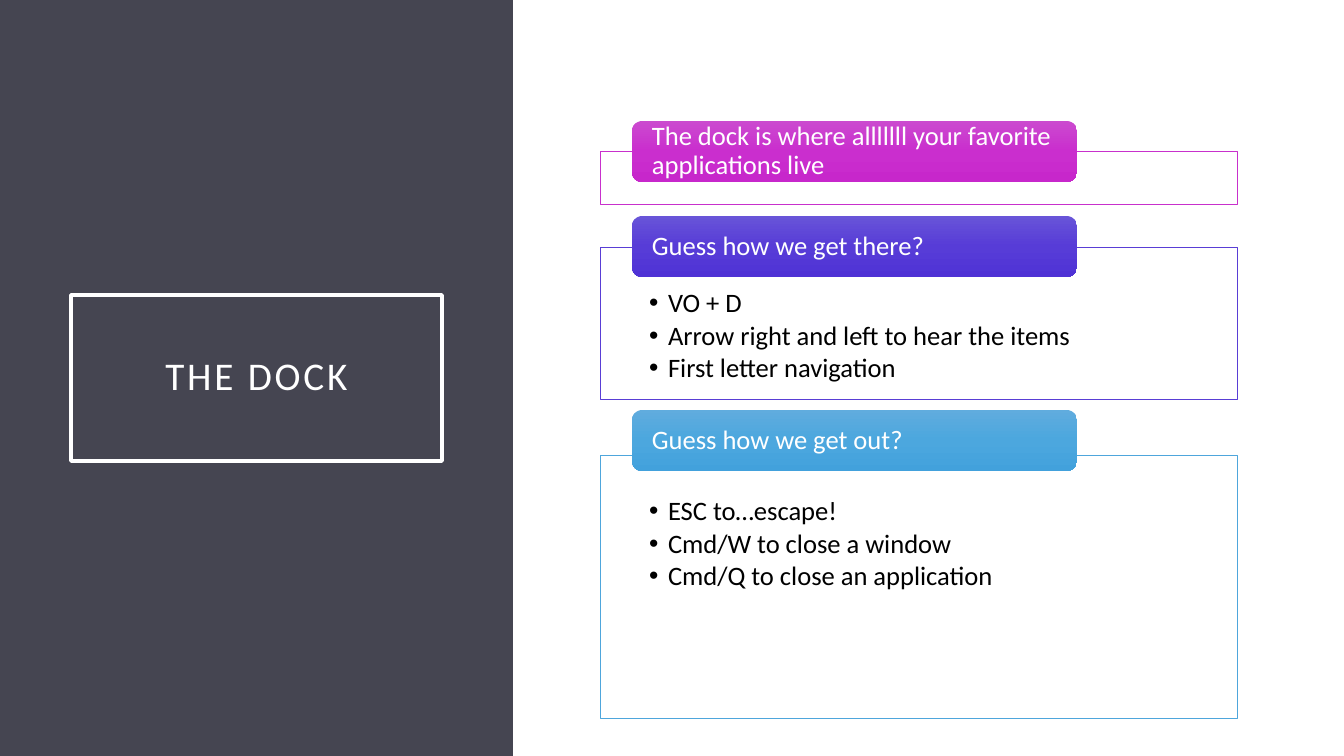
import copy

import pptx
import pptx.dml.color
import pptx.enum.shapes
import pptx.enum.text
import pptx.util

COLORS = {
    "panel": "454551", "white": "FFFFFF", "black": "000000",
    "pink": "C830CC", "violet": "593ED5", "blue": "4EA6DC",
}
FADES = {
    "pink": ("CB4ACF", "CA2ECE", "C727CB"),
    "violet": ("6854D8", "573CD7", "4F32D5"),
    "blue": ("60ACDE", "4CA7DE", "42A1DC"),
}
SHAPE = pptx.enum.shapes.MSO_SHAPE
ALIGN = pptx.enum.text.PP_ALIGN
ANCHOR = pptx.enum.text.MSO_ANCHOR
NO_FIT = pptx.enum.text.MSO_AUTO_SIZE.NONE
SCALE = 914400 / 100.8

# Tab top, frame top and frame height, colour, heading, list items
CARDS = [
    (121, 151, 53, "pink",
     "The dock is where alllllll your favorite applications live", []),
    (216, 247, 152, "violet", "Guess how we get there?",
     ["VO + D", "Arrow right and left to hear the items",
      "First letter navigation"]),
    (410, 455, 263, "blue", "Guess how we get out?",
     ["ESC to…escape!", "Cmd/W to close a window",
      "Cmd/Q to close an application"]),
]


def px(count):
    return pptx.util.Emu(round(count * SCALE))


def rgb(code):
    return pptx.dml.color.RGBColor.from_string(code)


def style(item, values):
    for name, value in values.items():
        setattr(item, name, value)


def place(shape, box):
    style(shape, dict(zip(("left", "top", "width", "height"), map(px, box))))


def draw(slide, kind, box):
    shape = slide.shapes.add_shape(kind, *map(px, box))
    shape.shadow.inherit = False
    shape.line.fill.background()
    return shape


def paint(shape, color):
    shape.fill.solid()
    shape.fill.fore_color.rgb = rgb(color)


def edge(shape, color, width):
    shape.line.color.rgb = rgb(color)
    shape.line.width = pptx.util.Pt(width)


def fade(shape, codes):
    """Fill from top to bottom with three evenly spaced colours."""
    shape.fill.gradient()
    shape.fill.gradient_angle = 270
    first = shape.element.spPr.find(".//" + pptx.oxml.ns.qn("a:gs"))
    first.addnext(copy.deepcopy(first))
    for index, (stop, code) in enumerate(zip(shape.fill.gradient_stops, codes)):
        stop.position = index / 2
        stop.color.rgb = rgb(code)


def write(shape, lines, size, color, insets, anchor, para):
    frame = shape.text_frame
    sides = ("margin_left", "margin_top", "margin_right", "margin_bottom")
    style(frame, dict(zip(sides, map(px, insets))))
    style(frame, {"word_wrap": True, "auto_size": NO_FIT,
                  "vertical_anchor": anchor})
    frame.text = "\n".join(lines)
    for line in frame.paragraphs:
        style(line, {"line_spacing": 0.9, "space_before": pptx.util.Pt(0),
                     **para})
        for run in line.runs:
            style(run.font, {"name": "Calibri", "size": pptx.util.Pt(size),
                             "bold": False})
            run.font.color.rgb = rgb(color)


def side(slide, box):
    """Dark panel with the framed title in it."""
    left, top, width, height = box
    panel = draw(slide, SHAPE.RECTANGLE, box)
    paint(panel, COLORS["panel"])
    title = slide.shapes.title
    title.element.addprevious(panel.element)
    place(title, (left + 71, top + 295, width - 142, 166))
    edge(title, COLORS["white"], 2.5)
    write(title, ["THE DOCK"], 28, COLORS["white"], (20, 20, 20, 20),
          ANCHOR.MIDDLE, {"alignment": ALIGN.CENTER})
    for run in title.text_frame.paragraphs[0].runs:
        run.font._element.set("spc", "200")


def items(body, lines):
    write(body, lines, 19, COLORS["black"], (49, 43, 49, 15), ANCHOR.TOP,
          {"alignment": ALIGN.LEFT, "space_after": pptx.util.Pt(2.5)})
    for line in body.text_frame.paragraphs:
        props = line._p.get_or_add_pPr()
        props.set("marL", str(px(19)))
        props.set("indent", str(px(-19)))


def card(slide, box, tab_top, color, heading, lines, bodies):
    """Outlined frame, with a list if there is one, under a heading tab."""
    if lines:
        frame = next(bodies)
        place(frame, box)
        items(frame, lines)
    else:
        frame = draw(slide, SHAPE.RECTANGLE, box)
    paint(frame, COLORS["white"])
    edge(frame, COLORS[color], 0.5)
    tab = draw(slide, SHAPE.ROUNDED_RECTANGLE,
               (box[0] + 32, tab_top, box[2] * 7 // 10, 61))
    fade(tab, FADES[color])
    write(tab, [heading], 19, COLORS["white"], (17, 0, 17, 0),
          ANCHOR.MIDDLE, {"alignment": ALIGN.LEFT})


def main():
    deck = pptx.Presentation()
    style(deck, {"slide_width": px(1344), "slide_height": px(756)})
    slide = deck.slides.add_slide(deck.slide_layouts.get_by_name("Two Content"))
    bodies = iter([slide.placeholders[1], slide.placeholders[2]])
    side(slide, (0, 0, 513, 756))
    for tab_top, top, height, color, heading, lines in CARDS:
        card(slide, (600, top, 637, height), tab_top, color, heading, lines,
             bodies)
    deck.save("out.pptx")


if __name__ == "__main__":
    main()
